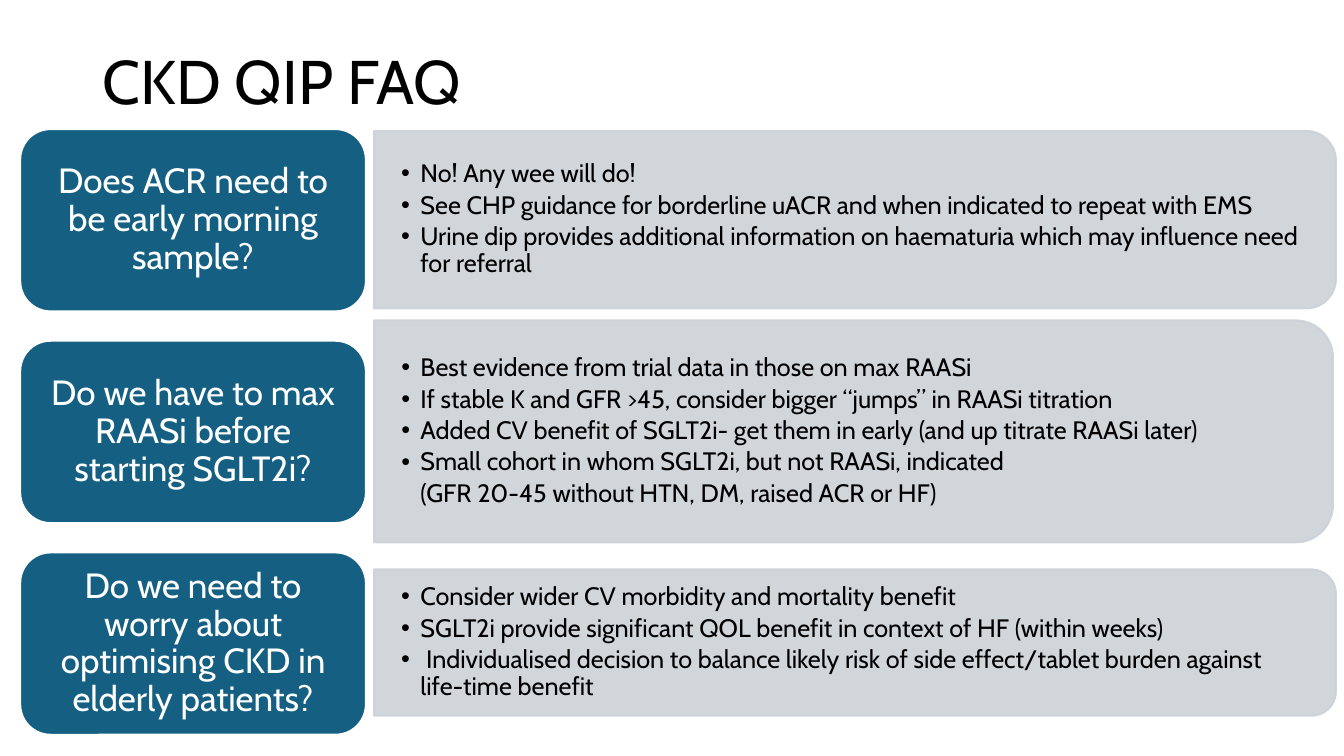
"""Build the CKD QIP FAQ slide: three questions with their answer panels."""
from math import cos, radians, sin

from lxml import etree
from pptx import Presentation
from pptx.dml.color import RGBColor
from pptx.enum.shapes import MSO_SHAPE
from pptx.enum.text import MSO_ANCHOR, PP_ALIGN
from pptx.oxml.ns import qn
from pptx.util import Inches, Pt

ROUNDED = MSO_SHAPE.ROUNDED_RECTANGLE
MIDDLE = MSO_ANCHOR.MIDDLE
LEFT, CENTER = PP_ALIGN.LEFT, PP_ALIGN.CENTER
FONT = "Cabin"
WHITE, BLACK, TEAL, GREY = "FFFFFF", "000000", "156082", "CCD2D8"
CARD_LEFT, CARD_TOP, CARD_WIDTH, CARD_HEIGHT, CARD_STEP = 0.2, 1.28, 3.43, 1.81, 2.1
PANEL_LEFT = 3.71
INDENT = 0.19


def paint(color_format, color):
    color_format.rgb = RGBColor.from_string(color)


def style_paragraph(para, size, color, align, space_after):
    para.alignment = align
    para.line_spacing = 0.9
    para.space_after = Pt(space_after)
    for span in para.runs:
        span.font.name = FONT
        span.font.size = Pt(size)
        paint(span.font.color, color)


# question, panel top, panel right, panel height, right inset, answers as (level, text)
FAQS = [
    ("Does ACR need to be early morning sample?", 1.3, 13.25, 1.76, 0.36, [
        (0, "No! Any wee will do!"),
        (0, "See CHP guidance for borderline uACR and when indicated to repeat with EMS"),
        (0, "Urine dip provides additional information on haematuria which may "
            "influence need for referral"),
    ]),
    ("Do we have to max RAASi before starting SGLT2i?", 3.18, 13.22, 2.2, 0.38, [
        (0, "Best evidence from trial data in those on max RAASi"),
        (0, "If stable K and GFR >45, consider bigger “jumps” in RAASi titration"),
        (0, "Added CV benefit of SGLT2i- get them in early (and up titrate RAASi later)"),
        (0, "Small cohort in whom SGLT2i, but not RAASi, indicated"),
        (1, "(GFR 20-45 without HTN, DM, raised ACR or HF)"),
    ]),
    ("Do we need to worry about optimising CKD in elderly patients?", 5.65, 13.25, 1.45, 0.34, [
        (0, "Consider wider CV morbidity and mortality benefit"),
        (0, "SGLT2i provide significant QOL benefit in context of HF (within weeks)"),
        (0, " Individualised decision to balance likely risk of side effect/tablet "
            "burden against life-time benefit"),
    ]),
]

deck = Presentation()
deck.slide_width, deck.slide_height = Inches(13.33), Inches(7.5)
page = deck.slides.add_slide(deck.slide_layouts[5])

title = page.shapes.title
title.left, title.top = Inches(0.92), Inches(0.21)
title.width, title.height = Inches(11.5), Inches(1.26)
title.text_frame.text = "CKD QIP FAQ"
title.text_frame.vertical_anchor = MIDDLE
style_paragraph(title.text_frame.paragraphs[0], 44, BLACK, LEFT, 0)

for row, (question, top, right, height, right_inset, answers) in enumerate(FAQS):
    bottom = top + height
    radius = height / 6
    corners = [(top + radius, range(-90, 1, 5)), (bottom - radius, range(0, 91, 5))]
    outline = [(right - radius + radius * cos(radians(angle)),
                center_y + radius * sin(radians(angle)))
               for center_y, angles in corners for angle in angles]
    outline.append((PANEL_LEFT, bottom))
    builder = page.shapes.build_freeform(Inches(PANEL_LEFT), Inches(top))
    builder.add_line_segments([(Inches(x), Inches(y)) for x, y in outline], close=True)
    panel = builder.convert_to_shape()
    panel.shadow.inherit = False
    panel.fill.solid()
    paint(panel.fill.fore_color, GREY)
    paint(panel.line.color, GREY)
    panel.line.width = Pt(1.5)
    for color_node in panel._element.spPr.iter(qn("a:srgbClr")):
        etree.SubElement(color_node, qn("a:alpha"), val="90000")

    frame = panel.text_frame
    frame.word_wrap = True
    frame.vertical_anchor = MIDDLE
    frame.margin_left, frame.margin_right = Inches(0.27), Inches(right_inset)
    frame.margin_top = frame.margin_bottom = Inches(0.22)
    for number, (level, answer) in enumerate(answers):
        para = frame.add_paragraph() if number else frame.paragraphs[0]
        para.text = answer
        para.level = level + 1
        properties = para._p.get_or_add_pPr()
        properties.set("marL", str(Inches(INDENT * (level + 1))))
        properties.set("indent", str(-Inches(INDENT)))
        if level:
            etree.SubElement(properties, qn("a:buNone"))
        else:
            etree.SubElement(properties, qn("a:buFont"), typeface="Arial")
            etree.SubElement(properties, qn("a:buChar"), char="•")
        style_paragraph(para, 18, BLACK, LEFT, 3)

    card = page.shapes.add_shape(ROUNDED, Inches(CARD_LEFT), Inches(CARD_TOP + row * CARD_STEP),
                                 Inches(CARD_WIDTH), Inches(CARD_HEIGHT))
    card.shadow.inherit = False
    card.fill.solid()
    paint(card.fill.fore_color, TEAL)
    paint(card.line.color, WHITE)
    card.line.width = Pt(1.5)
    frame = card.text_frame
    frame.word_wrap = True
    frame.vertical_anchor = MIDDLE
    frame.margin_left = frame.margin_right = Inches(0.1)
    frame.margin_top = frame.margin_bottom = Inches(0.05)
    frame.text = question
    style_paragraph(frame.paragraphs[0], 25, WHITE, CENTER, 11)

deck.save("out.pptx")
